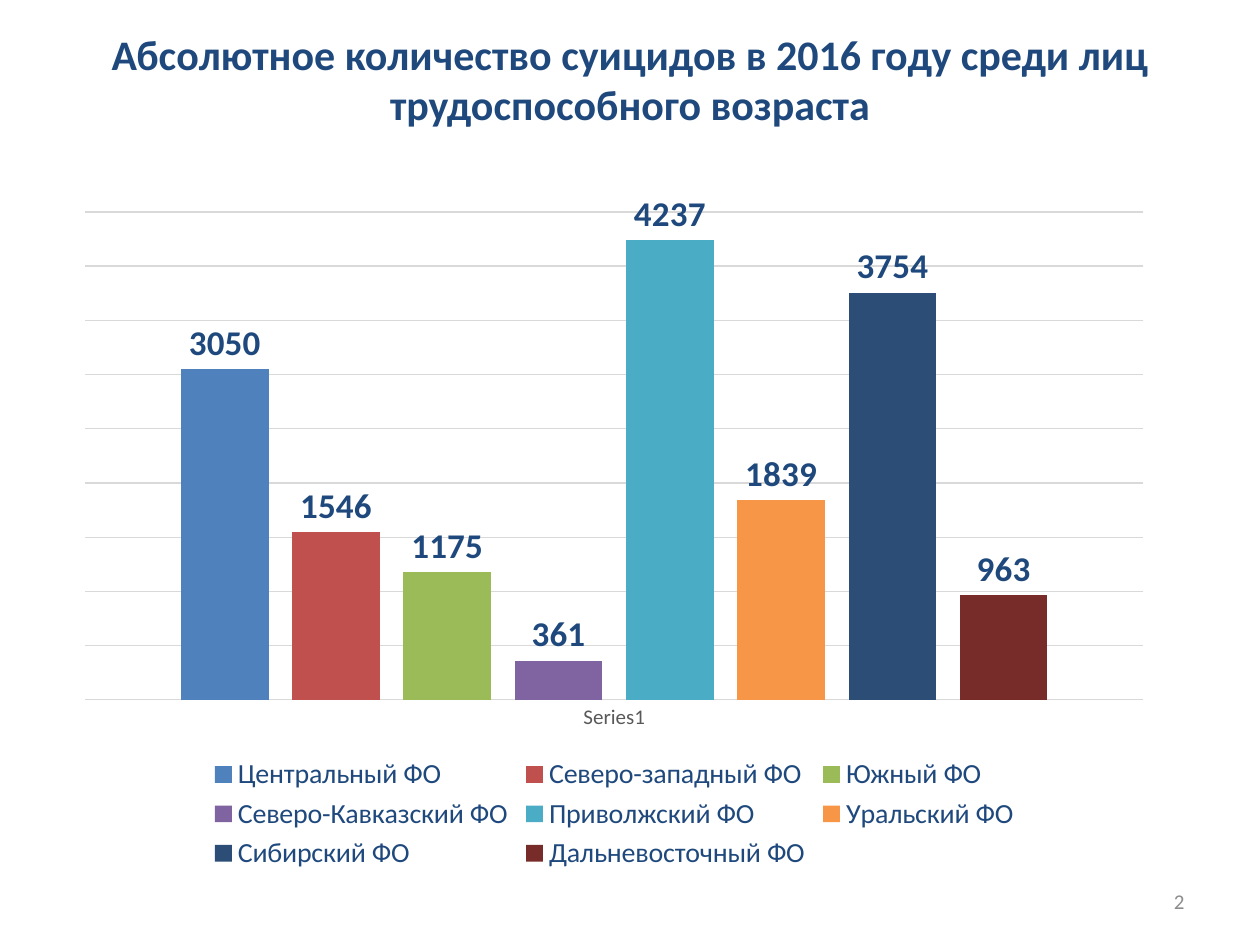
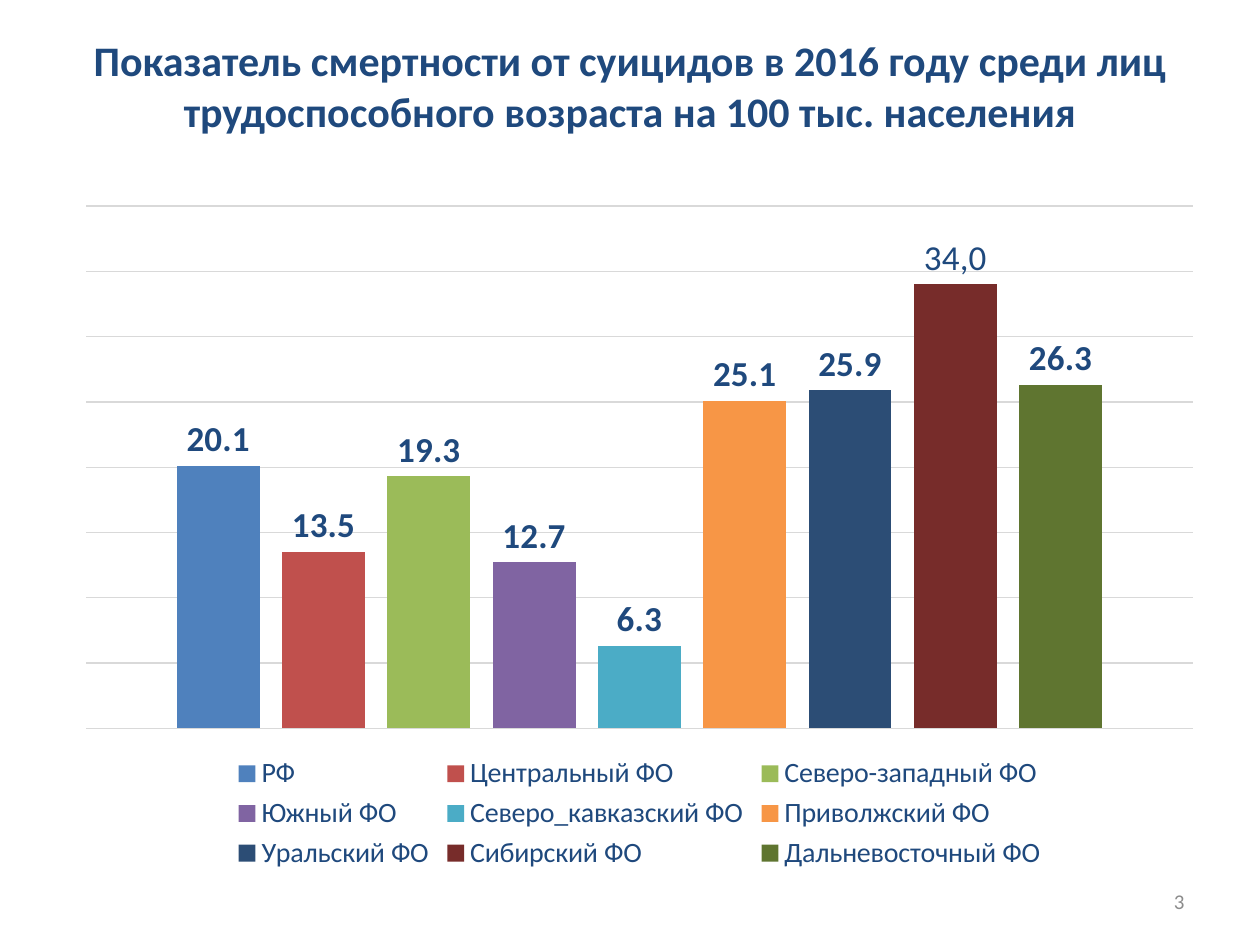
"""Build two slides of column charts on suicides by federal district in 2016."""
from pptx import Presentation, util as u
from pptx.chart import data as chart_data
from pptx.dml.color import RGBColor
from pptx.enum import chart as charts, text

Pt = u.Pt
NAVY = RGBColor(0x1F, 0x49, 0x7D)
GREY = RGBColor(0x8C, 0x8C, 0x8C)
AXIS_TEXT = RGBColor(0x59, 0x59, 0x59)
GRID = RGBColor(0xD9, 0xD9, 0xD9)
BLACK = RGBColor(0, 0, 0)
BLUE = RGBColor(0x4F, 0x81, 0xBD)
RED = RGBColor(0xC0, 0x50, 0x4D)
GREEN = RGBColor(0x9B, 0xBB, 0x59)
PURPLE = RGBColor(0x80, 0x64, 0xA2)
TEAL = RGBColor(0x4B, 0xAC, 0xC6)
ORANGE = RGBColor(0xF7, 0x96, 0x46)
DARK_BLUE = RGBColor(0x2C, 0x4D, 0x75)
DARK_RED = RGBColor(0x77, 0x2C, 0x2A)
DARK_GREEN = RGBColor(0x5F, 0x75, 0x30)

TITLE_FONT = {"size": Pt(24), "bold": True, "color": NAVY}
NUMBER_FONT = {"size": Pt(12), "color": GREY}
CHART_FONT = {"size": Pt(10), "color": BLACK}
AXIS_FONT = {"size": Pt(12), "color": AXIS_TEXT}
LEGEND_FONT = {"size": Pt(16), "color": NAVY}
LABEL_FONT = {"size": Pt(20), "bold": True, "color": NAVY}
PLAIN_LABEL_FONT = {**LABEL_FONT, "bold": False}

PAGES = [
    {
        "title": "Абсолютное количество суицидов в 2016 году среди лиц трудоспособного возраста",
        "title_top": 0, "number": "2", "chart_width": 630,
        "category": "Series1", "show_category": True, "maximum": 4500, "step": 500,
        "districts": [
            ("Центральный ФО", 3050, BLUE),
            ("Северо-западный ФО", 1546, RED),
            ("Южный ФО", 1175, GREEN),
            ("Северо-Кавказский ФО", 361, PURPLE),
            ("Приволжский ФО", 4237, TEAL),
            ("Уральский ФО", 1839, ORANGE),
            ("Сибирский ФО", 3754, DARK_BLUE),
            ("Дальневосточный ФО", 963, DARK_RED),
        ],
        "custom_labels": {},
    },
    {
        "title": "Показатель смертности от суицидов в 2016 году среди лиц "
                 "трудоспособного возраста на 100 тыс. населения",
        "title_top": 3.6, "number": "3", "chart_width": 658.8,
        "category": "1", "show_category": False, "maximum": 40, "step": 5,
        "districts": [
            ("РФ", 20.1, BLUE),
            ("Центральный ФО", 13.5, RED),
            ("Северо-западный ФО", 19.3, GREEN),
            ("Южный ФО", 12.7, PURPLE),
            ("Северо_кавказский ФО", 6.3, TEAL),
            ("Приволжский ФО", 25.1, ORANGE),
            ("Уральский ФО", 25.9, DARK_BLUE),
            ("Сибирский ФО", 34, DARK_RED),
            ("Дальневосточный ФО", 26.3, DARK_GREEN),
        ],
        "custom_labels": {"Сибирский ФО": "34,0"},
    },
]


def set_font(font, values):
    font.name = "Calibri"
    for name, value in values.items():
        if name == "color":
            font.color.rgb = value
        else:
            setattr(font, name, value)


def write_line(frame, words, align, values):
    frame.word_wrap = True
    frame.vertical_anchor = text.MSO_ANCHOR.MIDDLE
    para = frame.paragraphs[0]
    para.alignment = align
    span = para.add_run()
    span.text = words
    set_font(span.font, values)


deck = Presentation()
deck.slide_width, deck.slide_height = Pt(720), Pt(540)

for page in PAGES:
    slide = deck.slides.add_slide(deck.slide_layouts[5])
    title = slide.shapes.title
    title.left, title.top = Pt(36), Pt(page["title_top"])
    title.width, title.height = Pt(648), Pt(90)
    write_line(title.text_frame, page["title"], text.PP_ALIGN.CENTER, TITLE_FONT)

    number_box = slide.shapes.add_textbox(Pt(516), Pt(500.5), Pt(168), Pt(28.75))
    write_line(number_box.text_frame, page["number"], text.PP_ALIGN.RIGHT, NUMBER_FONT)

    figures = chart_data.CategoryChartData()
    figures.categories = [page["category"]]
    for district, value, color in page["districts"]:
        figures.add_series(district, [value])
    chart = slide.shapes.add_chart(
        charts.XL_CHART_TYPE.COLUMN_CLUSTERED,
        Pt(36), Pt(110), Pt(page["chart_width"]), Pt(390.5), figures).chart
    set_font(chart.font, CHART_FONT)
    chart.has_title = False
    chart.has_legend = True
    chart.legend.position = charts.XL_LEGEND_POSITION.BOTTOM
    chart.legend.include_in_layout = False
    set_font(chart.legend.font, LEGEND_FONT)

    value_axis = chart.value_axis
    value_axis.visible = False
    value_axis.minimum_scale, value_axis.maximum_scale = 0, page["maximum"]
    value_axis.major_unit = page["step"]
    value_axis.has_major_gridlines = True
    category_axis = chart.category_axis
    category_axis.visible = page["show_category"]
    category_axis.major_tick_mark = charts.XL_TICK_MARK.NONE
    set_font(category_axis.tick_labels.font, AXIS_FONT)
    for line in (value_axis.major_gridlines.format.line, category_axis.format.line):
        line.color.rgb = GRID
        line.width = Pt(0.75)

    plot = chart.plots[0]
    plot.gap_width, plot.overlap = 219, -27
    plot.vary_by_categories = False
    for series, (district, value, color) in zip(plot.series, page["districts"]):
        series.format.fill.solid()
        series.format.fill.fore_color.rgb = color
        series.invert_if_negative = False
        labels = series.data_labels
        labels.show_value = True
        labels.position = charts.XL_LABEL_POSITION.OUTSIDE_END
        set_font(labels.font, LABEL_FONT)
        if district in page["custom_labels"]:
            label = series.points[0].data_label
            span = label.text_frame.paragraphs[0].add_run()
            span.text = page["custom_labels"][district]
            set_font(span.font, PLAIN_LABEL_FONT)
            label.position = charts.XL_LABEL_POSITION.OUTSIDE_END

deck.save("out.pptx")
